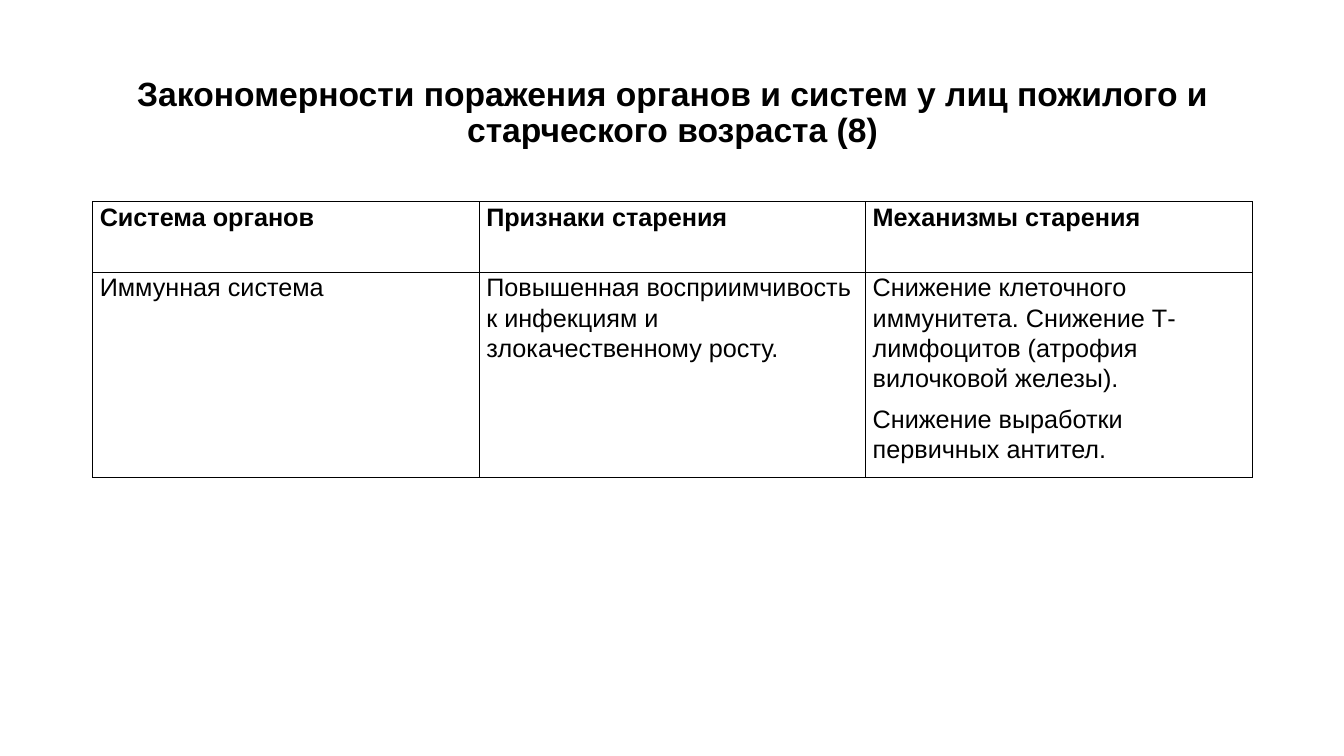
import pptx
import pptx.dml.color
import pptx.enum.text
import pptx.oxml
import pptx.oxml.ns
import pptx.util
from pptx.util import Inches

BLACK = pptx.dml.color.RGBColor(0, 0, 0)
ALIGN = pptx.enum.text.PP_ALIGN
ANCHOR = pptx.enum.text.MSO_ANCHOR
LEFT, WIDTH = 0.92, 11.5

HEADER = ["Система органов", "Признаки старения", "Механизмы старения"]
IMMUNE_SYSTEM = [
    "Иммунная система",
    "Повышенная восприимчивость к инфекциям и злокачественному росту.",
    "Снижение клеточного иммунитета. Снижение Т-лимфоцитов "
    "(атрофия вилочковой железы).\nСнижение выработки первичных антител.",
]


class AgeingSlide:
    """Holds the text style and the current slide, and adds its elements."""

    def __init__(self, slide, font_name="Arial", color=BLACK):
        self.slide = slide
        self.font_name = font_name
        self.color = color

    def style(self, paragraph, size, bold, align, spacing):
        paragraph.alignment = align
        paragraph.line_spacing = spacing
        paragraph.font.name = self.font_name
        paragraph.font.size = pptx.util.Pt(size)
        paragraph.font.bold = bold
        paragraph.font.color.rgb = self.color

    def title(self, text, top, height):
        heading = self.slide.shapes.add_textbox(
            Inches(LEFT), Inches(top), Inches(WIDTH), Inches(height)).text_frame
        heading.word_wrap = True
        heading.vertical_anchor = ANCHOR.MIDDLE
        heading.text = text
        self.style(heading.paragraphs[0], 24, True, ALIGN.CENTER, 0.9)

    def borders(self, cell):
        properties = cell._tc.get_or_add_tcPr()
        for index, side in enumerate(("lnL", "lnR", "lnT", "lnB")):
            properties.insert(index, pptx.oxml.parse_xml(
                f'<a:{side} {pptx.oxml.ns.nsdecls("a")} w="12700">'
                f'<a:solidFill><a:srgbClr val="{self.color}"/></a:solidFill></a:{side}>'))

    def cell(self, cell, text, bold):
        cell.fill.background()
        cell.margin_left = cell.margin_right = Inches(0.07)
        cell.margin_top = cell.margin_bottom = 0
        cell.text = text
        for paragraph in cell.text_frame.paragraphs:
            self.style(paragraph, 18, bold, ALIGN.LEFT, 1.07)
            paragraph.space_after = pptx.util.Pt(8)
        self.borders(cell)

    def table(self, rows, top, heights):
        systems = self.slide.shapes.add_table(
            len(rows), len(rows[0]), Inches(LEFT), Inches(top),
            Inches(WIDTH), Inches(sum(heights))).table
        for row_index, (texts, height) in enumerate(zip(rows, heights)):
            systems.rows[row_index].height = Inches(height)
            for column_index, text in enumerate(texts):
                self.cell(systems.cell(row_index, column_index), text, row_index == 0)


def main():
    presentation = pptx.Presentation()
    presentation.slide_width = Inches(13.33)
    presentation.slide_height = Inches(7.5)
    ageing = AgeingSlide(presentation.slides.add_slide(presentation.slide_layouts[6]))
    ageing.title("Закономерности поражения органов и систем у лиц пожилого "
                 "и старческого возраста (8)", 0.4, 1.45)
    ageing.table([HEADER, IMMUNE_SYSTEM], 2, [0.7, 1.91])
    presentation.save("out.pptx")


if __name__ == "__main__":
    main()
